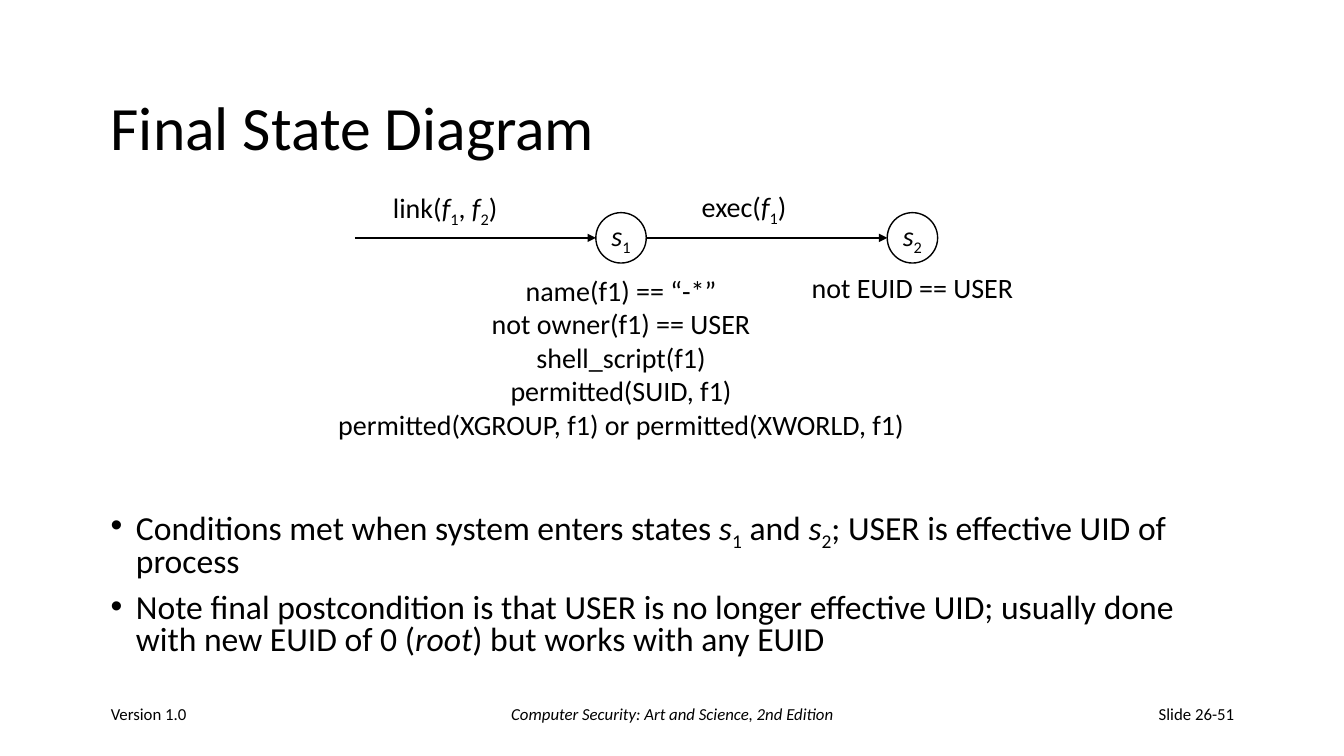
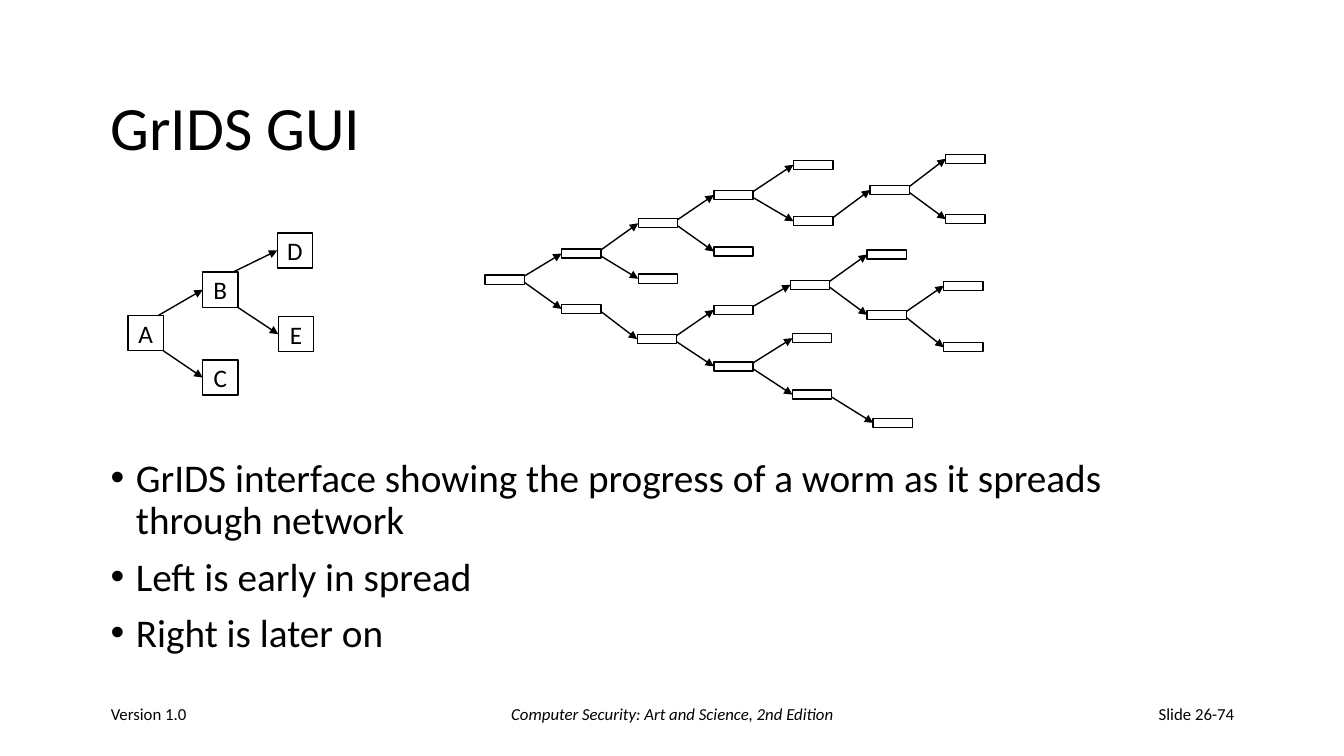
from lxml import etree
from pptx import Presentation
from pptx import util as u
from pptx.dml.color import RGBColor
from pptx.enum import shapes, text
from pptx.oxml import ns

BLACK = RGBColor(0x00, 0x00, 0x00)
WHITE = RGBColor(0xFF, 0xFF, 0xFF)
FONT = "Calibri"
LEFT, RIGHT, CENTER = text.PP_ALIGN.LEFT, text.PP_ALIGN.RIGHT, text.PP_ALIGN.CENTER
TOP, MIDDLE = text.MSO_ANCHOR.TOP, text.MSO_ANCHOR.MIDDLE
OVAL, RECTANGLE = shapes.MSO_SHAPE.OVAL, shapes.MSO_SHAPE.RECTANGLE
MARGIN = 1
CONTENT_WIDTH = 11.33


def italic(words):
    return words, "italic"


def variable(name, index):
    return [italic(name), (index, "subscript")]


def add_bullet(para):
    props = para._p.get_or_add_pPr()
    props.set("marL", str(u.Inches(0.25)))
    props.set("indent", str(-u.Inches(0.25)))
    etree.SubElement(props, ns.qn("a:buFont")).set("typeface", "Arial")
    etree.SubElement(props, ns.qn("a:buChar")).set("char", "•")


def write(frame, paragraphs, size=20, align=LEFT, anchor=TOP, wrap=True,
          bullet=False, spacing=None, gap=0):
    frame.word_wrap = wrap
    frame.vertical_anchor = anchor
    for number, content in enumerate(paragraphs):
        para = frame.add_paragraph() if number else frame.paragraphs[0]
        if bullet:
            add_bullet(para)
        para.alignment = align
        if spacing:
            para.line_spacing = spacing
        if number and gap:
            para.space_before = u.Pt(gap)
        for part in [content] if isinstance(content, str) else content:
            words, style = (part, None) if isinstance(part, str) else part
            span = para.add_run()
            span.text = words
            span.font.name = FONT
            span.font.size = u.Pt(size)
            span.font.color.rgb = BLACK
            span.font.italic = style == "italic"
            if style == "subscript":
                span._r.get_or_add_rPr().set("baseline", "-25000")


def add_text(page, left, top, width, height, paragraphs, **style):
    box = page.shapes.add_textbox(*map(u.Inches, (left, top, width, height)))
    write(box.text_frame, paragraphs, **style)


def add_outline(page, kind, left, top, width, height, label=None, size=18):
    shape = page.shapes.add_shape(kind, *map(u.Inches, (left, top, width, height)))
    shape.shadow.inherit = False
    shape.fill.background()
    shape.line.color.rgb = BLACK
    shape.line.width = u.Pt(1)
    if label:
        frame = shape.text_frame
        frame.margin_left = frame.margin_right = 0
        frame.margin_top = frame.margin_bottom = 0
        write(frame, [label], size=size, align=CENTER, anchor=MIDDLE, wrap=False)


def add_arrow(page, *ends):
    arrow = page.shapes.add_connector(shapes.MSO_CONNECTOR.STRAIGHT, *map(u.Inches, ends))
    arrow.line.color.rgb = BLACK
    arrow.line.width = u.Pt(1)
    etree.SubElement(arrow.line._get_or_add_ln(), ns.qn("a:tailEnd")).set("type", "triangle")
    etree.SubElement(arrow._element.spPr, ns.qn("a:effectLst"))


def add_footer(page, number):
    top, height = 6.83, 0.5
    style = {"size": 12, "anchor": MIDDLE}
    add_text(page, MARGIN, top, 2.78, height, ["Version 1.0"], **style)
    add_text(page, 4.56, top, 4.22, height,
             [[italic("Computer Security: Art and Science, 2nd Edition")]],
             align=CENTER, **style)
    add_text(page, 9.56, top, 2.78, height, [f"Slide {number}"], align=RIGHT, **style)


def add_page(deck, title, number):
    page = deck.slides.add_slide(deck.slide_layouts[6])
    page.background.fill.solid()
    page.background.fill.fore_color.rgb = WHITE
    add_text(page, MARGIN, 0.67, CONTENT_WIDTH, 1.25, [title],
             size=44, anchor=MIDDLE, spacing=0.9)
    add_footer(page, number)
    return page


def add_bullets(page, top, height, paragraphs, size, spacing):
    add_text(page, MARGIN, top, CONTENT_WIDTH, height, paragraphs,
             size=size, spacing=spacing, bullet=True, gap=10)


def add_transitions(page, left, top):
    arrow_length, diameter = 2.39, 0.5
    middle = top + diameter / 2
    for step in range(2):
        start = left + step * (arrow_length + diameter)
        state = start + arrow_length
        add_arrow(page, start, middle, state, middle)
        add_outline(page, OVAL, state, top, diameter, diameter,
                    variable("s", str(step + 1)), size=20)

    link = ["link(", *variable("f", "1"), ", ", *variable("f", "2"), ")"]
    execute = ["exec(", *variable("f", "1"), ")"]
    first_conditions = [
        "name(f1) == “-*”",
        "not owner(f1) == USER",
        "shell_script(f1)",
        "permitted(SUID, f1)",
        "permitted(XGROUP, f1) or permitted(XWORLD, f1)",
    ]
    labels = [
        (0.26, -0.27, 1.27, 0.44, [link]),
        (3.33, -0.28, 1.06, 0.44, [execute]),
        (-0.3, 0.55, 5.88, 1.78, first_conditions),
        (4.42, 0.52, 2.22, 0.44, ["not EUID == USER"]),
    ]
    for x, y, width, height, paragraphs in labels:
        add_text(page, left + x, top + y, width, height, paragraphs,
                 align=CENTER, wrap=False)


def add_spread(page, left, top, hosts, width, height, rise, fall):
    for name, (parent, x, y) in hosts.items():
        label = name if isinstance(name, str) else None
        add_outline(page, RECTANGLE, left + x, top + y, width, height, label)
        if parent is not None:
            _, parent_x, parent_y = hosts[parent]
            shift_x, shift_y = rise if y < parent_y else fall
            add_arrow(page, left + parent_x + shift_x, top + parent_y + shift_y,
                      left + x, top + y + height / 2)


def build_state_diagram(deck):
    page = add_page(deck, "Final State Diagram", "26-51")
    add_transitions(page, 3.52, 2.11)
    add_bullets(page, 5.02, 1.66, [
        ["Conditions met when system enters states ", *variable("s", "1"), " and ",
         *variable("s", "2"), "; USER is effective UID of process"],
        ["Note final postcondition is that USER is no longer effective UID; "
         "usually done with new EUID of 0 (", italic("root"), ") but works with any EUID"],
    ], size=24, spacing=0.8)


def build_worm_spread(deck):
    page = add_page(deck, "GrIDS GUI", "26-74")
    early_hosts = {
        "A": (None, 0, 0.82),
        "B": ("A", 0.74, 0.39),
        "C": ("A", 0.74, 1.26),
        "D": ("B", 1.48, 0),
        "E": ("B", 1.49, 0.83),
    }
    later_hosts = dict(enumerate([
        (None, 0, 1.2),
        (0, 0.76, 0.94), (0, 0.76, 1.49),
        (1, 1.52, 0.64), (1, 1.52, 1.19), (2, 1.51, 1.79),
        (3, 2.27, 0.36), (3, 2.27, 0.92), (5, 2.27, 1.5), (5, 2.27, 2.06),
        (6, 3.06, 0.06), (6, 3.06, 0.62), (8, 3.03, 1.25),
        (9, 3.05, 1.78), (9, 3.05, 2.34),
        (11, 3.82, 0.31), (12, 3.79, 0.95), (12, 3.79, 1.55), (14, 3.85, 2.62),
        (15, 4.57, 0), (15, 4.57, 0.6), (17, 4.55, 1.26), (17, 4.55, 1.87),
    ]))
    add_spread(page, 1.27, 2.31, early_hosts, 0.35, 0.35, rise=(0.3, 0), fall=(0.35, 0.35))
    add_spread(page, 4.81, 1.53, later_hosts, 0.39, 0.09, rise=(0.39, 0.01), fall=(0.39, 0.07))
    add_bullets(page, 4.5, 2.17, [
        "GrIDS interface showing the progress of a worm as it spreads through network",
        "Left is early in spread",
        "Right is later on",
    ], size=28, spacing=0.9)


def main():
    deck = Presentation()
    deck.slide_width = u.Inches(13.33)
    deck.slide_height = u.Inches(7.5)
    build_state_diagram(deck)
    build_worm_spread(deck)
    deck.save("out.pptx")


if __name__ == "__main__":
    main()
